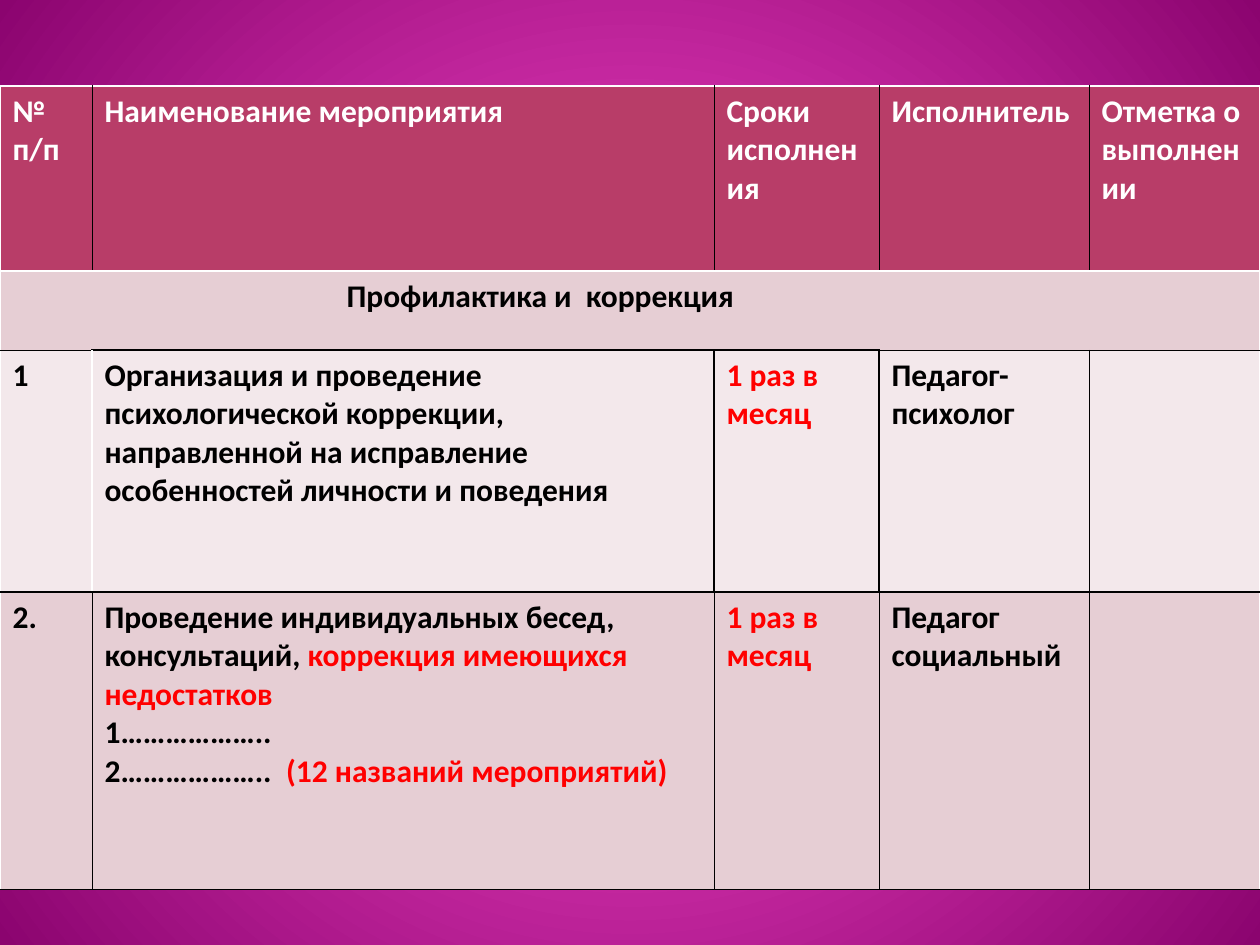
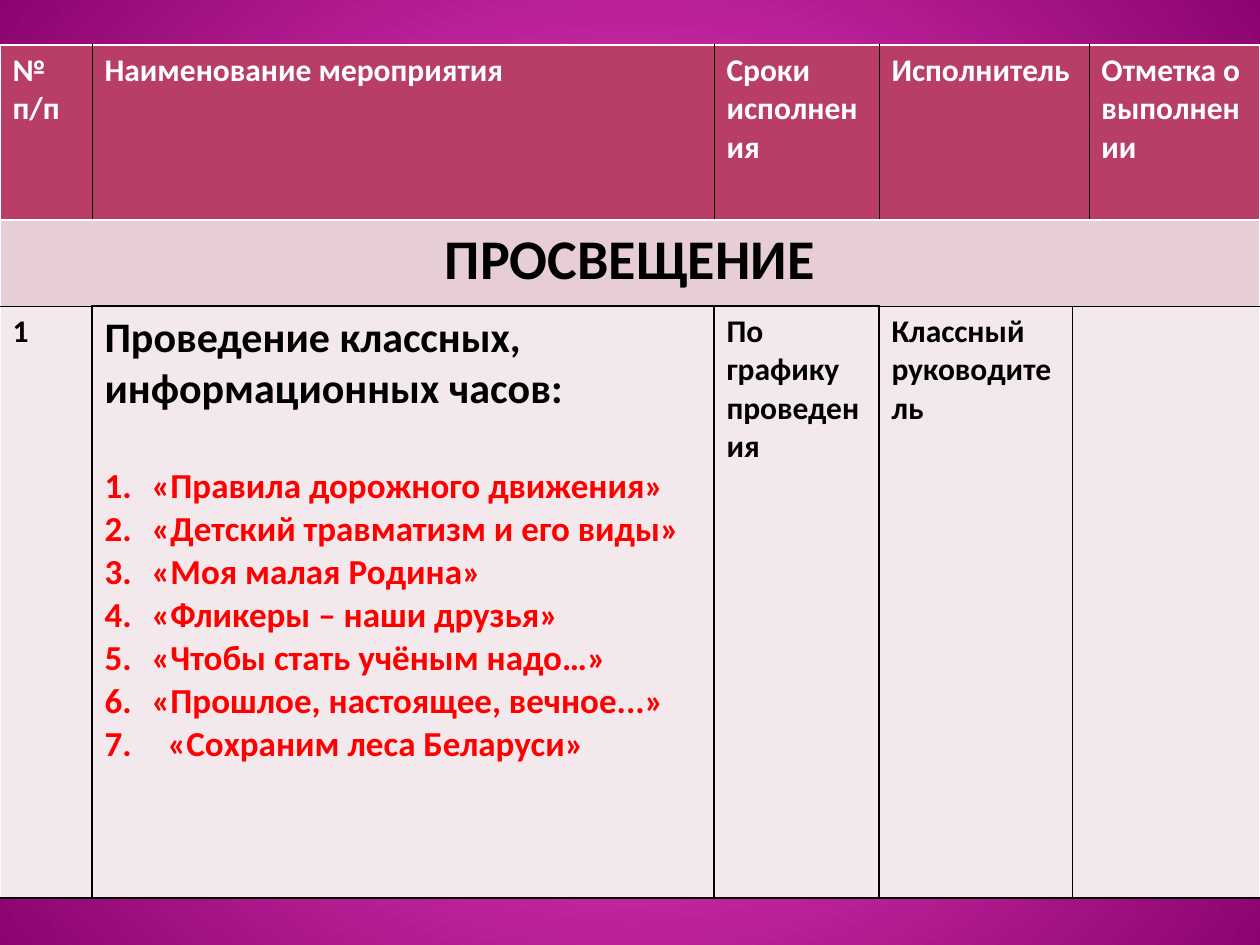
from lxml import etree
from pptx import Presentation
from pptx.dml.color import RGBColor
from pptx.enum.text import PP_ALIGN
from pptx.oxml.ns import qn
from pptx.util import Pt

CENTER = PP_ALIGN.CENTER
PX = 914400 // 126
WIDE, HIGH = 1260, 945
FONT = "Calibri"
WHITE, BLACK, RED = "FFFFFF", "000000", "FF0000"
HEAD, BAND, PALE = "B83D68", "E6CED4", "F3E8EB"
GLOW, EDGE = "FF4CD1", "8B046F"

# Border codes, in the order left, top, right, bottom
LINES = {"W": (WHITE, 1), "K": (BLACK, 1), "k": (BLACK, 0.25)}


def para(*runs, **form):
    """One paragraph: its runs (text or (text, hue)) and its format."""
    return runs, form


def cell(edges, *paras, span=1):
    return edges, paras, span


def header(span=1):
    """The header row; the fourth cell may span two columns."""
    names = ["№ п/п", "Наименование мероприятия", "Сроки исполнения",
             "Исполнитель", "Отметка о выполнении"]
    edges = ["WWkW", "kWkW", "kWkW", "kWkW", "kWWW"]
    spans = [1, 1, 1, span, 1]
    return HEAD, [cell(e, para(n, hue=WHITE), span=s)
                  for n, e, s in zip(names, edges, spans)]


# Content
TALKS = ["«Правила дорожного движения»", "«Детский травматизм и его виды»",
         "«Моя малая Родина»", "«Фликеры – наши друзья»",
         "«Чтобы стать учёным надо…»", "«Прошлое, настоящее, вечное...»",
         "«Сохраним леса Беларуси»"]
LAST = len(TALKS)
talks = [para(t, size=20, hue=RED, num=n,
              left=63 if n == LAST else 47, hang=63 if n == LAST else 47,
              gap=29 if n == 1 else 0)
         for n, t in enumerate(TALKS, 1)]

PLANS = [
    dict(top=86, cols=[92, 622, 165, 210, 171], rows=[
        (185, *header()),
        (79, BAND, [cell("WWWk", para("Профилактика и  коррекция", left=334),
                         span=5)]),
        (242, PALE, [
            cell("WkWK", para("1")),
            cell("WKKK", para("Организация и проведение психологической "
                              "коррекции, направленной на исправление "
                              "особенностей личности и поведения")),
            cell("KKKK", para("1 раз в месяц", hue=RED)),
            cell("KkkK", para("Педагог-психолог")),
            cell("kkWK")]),
        (297, BAND, [
            cell("WKkk", para("2.")),
            cell("kKkk",
                 para("Проведение индивидуальных бесед, консультаций, ",
                      ("коррекция имеющихся недостатков", RED)),
                 para("1……………….."),
                 para("2………………..  ", ("(12 названий мероприятий)", RED))),
            cell("kKkk", para("1 раз в месяц", hue=RED)),
            cell("kKkk", para("Педагог социальный")),
            cell("kKWk")]),
    ]),
    dict(top=45, cols=[92, 622, 165, 193, 17, 171], rows=[
        (175, *header(span=2)),
        (86, BAND, [cell("WWWk", para("ПРОСВЕЩЕНИЕ", size=32, mid=True),
                         span=6)]),
        (592, PALE, [
            cell("WkKK", para("1")),
            cell("KKKK",
                 para("Проведение классных, информационных часов:", size=24),
                 *talks),
            cell("KKKK", para("По графику проведения")),
            cell("KkkK", para("Классный руководитель")),
            cell("kkWK", span=2)]),
    ]),
]


def color(code):
    return RGBColor.from_string(code)


def write(par, runs, size=18, hue=BLACK, left=0, hang=0, num=0, gap=0,
          mid=False):
    """Fill a paragraph with bold runs; num makes it a numbered item."""
    if mid:
        par.alignment = CENTER
    if gap:
        par.space_before = Pt(gap)
    props = par._p.get_or_add_pPr()
    if left:
        props.set("marL", str(left * PX))
        props.set("indent", str(-hang * PX))
    if num:
        auto = etree.SubElement(props, qn("a:buAutoNum"), type="arabicPeriod")
        if num == LAST:
            auto.set("startAt", str(num))
    for part in runs:
        text, tint = (part, hue) if isinstance(part, str) else part
        run = par.add_run()
        run.text = text
        font = run.font
        font.name, font.size, font.bold = FONT, Pt(size), True
        font.color.rgb = color(tint)


def border(box, edges):
    props = box._tc.get_or_add_tcPr()
    sides = dict(zip("LTRB", edges))
    for spot, side in enumerate("LRTB"):
        hue, width = LINES[sides[side]]
        line = etree.Element(qn("a:ln" + side), w=str(int(Pt(width))))
        fill = etree.SubElement(line, qn("a:solidFill"))
        etree.SubElement(fill, qn("a:srgbClr"), val=hue)
        props.insert(spot, line)


def backdrop(slide):
    """Radial gradient from the centre of the slide."""
    fill = slide.background.fill
    fill.gradient()
    for stop, hue, spot in zip(fill.gradient_stops, (GLOW, EDGE), (0, 1)):
        stop.color.rgb = color(hue)
        stop.position = spot
    lin = next(slide._element.iter(qn("a:lin")))
    ring = etree.Element(qn("a:path"))
    ring.set("path", "circle")
    etree.SubElement(ring, qn("a:fillToRect"),
                     {side: "50000" for side in "ltrb"})
    lin.getparent().replace(lin, ring)


def draw(slide, top, cols, rows):
    high = sum(row[0] for row in rows)
    grid = slide.shapes.add_table(len(rows), len(cols), 0, top * PX,
                                  WIDE * PX, high * PX).table
    grid.first_row = grid.horz_banding = False
    for col, wide in zip(grid.columns, cols):
        col.width = wide * PX
    for y, (tall, tint, cells) in enumerate(rows):
        grid.rows[y].height = tall * PX
        for x in range(len(cols)):
            back = grid.cell(y, x).fill
            back.solid()
            back.fore_color.rgb = color(tint)
        x = 0
        for edges, paras, span in cells:
            box = grid.cell(y, x)
            if span > 1:
                box.merge(grid.cell(y, x + span - 1))
            border(box, edges)
            frame = box.text_frame
            for n, (runs, form) in enumerate(paras):
                par = frame.add_paragraph() if n else frame.paragraphs[0]
                write(par, runs, **form)
            x += span


def main():
    deck = Presentation()
    deck.slide_width, deck.slide_height = WIDE * PX, HIGH * PX
    for plan in PLANS:
        slide = deck.slides.add_slide(deck.slide_layouts[6])
        backdrop(slide)
        draw(slide, **plan)
    deck.save("out.pptx")


if __name__ == "__main__":
    main()
